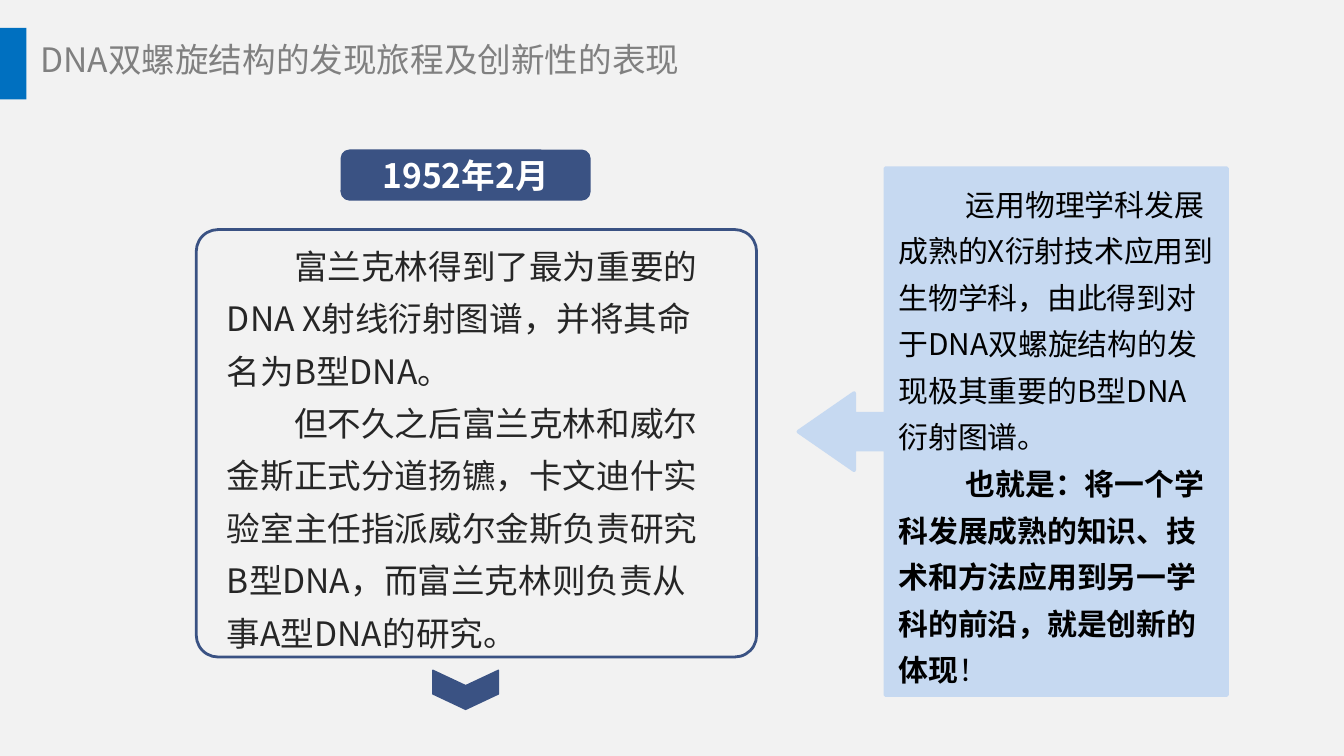
from dataclasses import dataclass

from lxml import etree
from pptx import Presentation
from pptx.dml.color import RGBColor
from pptx.enum.shapes import MSO_SHAPE
from pptx.enum.text import MSO_ANCHOR, MSO_AUTO_SIZE, PP_ALIGN
from pptx.oxml.ns import qn
from pptx.util import Cm, Pt

RECT = MSO_SHAPE.RECTANGLE
ROUND = MSO_SHAPE.ROUNDED_RECTANGLE
CHEVRON = MSO_SHAPE.CHEVRON
CALLOUT = MSO_SHAPE.LEFT_ARROW_CALLOUT
TOP, MIDDLE = MSO_ANCHOR.TOP, MSO_ANCHOR.MIDDLE
LEFT, CENTER = PP_ALIGN.LEFT, PP_ALIGN.CENTER
NO_FIT = MSO_AUTO_SIZE.NONE


@dataclass(frozen=True)
class Theme:
    font: str = "Noto Sans CJK SC"
    back: str = "F2F2F2"
    accent: str = "0070C0"
    navy: str = "3A5283"
    pale: str = "C6D9F1"
    white: str = "FFFFFF"
    title: str = "808080"
    body: str = "262626"
    black: str = "000000"
    large: int = 18
    small: int = 16
    spacing: float = 1.3


THEME = Theme()


def rgb(value):
    return RGBColor.from_string(value)


def add_shape(slide, kind, box, fill=None, line=None, width=0.75, adjust=()):
    sp = slide.shapes.add_shape(kind, *(Cm(v) for v in box))
    sp.shadow.inherit = False
    for i, value in enumerate(adjust):
        sp.adjustments[i] = value
    for fmt, color in ((sp.fill, fill), (sp.line.fill, line)):
        if color:
            fmt.solid()
            fmt.fore_color.rgb = rgb(color)
        else:
            fmt.background()
    if line:
        sp.line.width = Pt(width)
    return sp


def set_frame(tf, anchor=TOP, insets=(0.18, 0.08), wrap=True):
    x, y = (Cm(v) for v in insets)
    values = {
        "word_wrap": wrap, "auto_size": NO_FIT, "vertical_anchor": anchor,
        "margin_left": x, "margin_right": x,
        "margin_top": y, "margin_bottom": y,
    }
    for name, value in values.items():
        setattr(tf, name, value)


def write(tf, paragraphs, color, size, align=LEFT, indent=0, spacing=None):
    for i, runs in enumerate(paragraphs):
        p = tf.add_paragraph() if i else tf.paragraphs[0]
        p.alignment = align
        if spacing:
            p.line_spacing = spacing
        if indent:
            pPr = p._p.get_or_add_pPr()
            pPr.set("marL", "0")
            pPr.set("indent", str(Cm(indent)))
        for text, bold in runs:
            r = p.add_run()
            r.text = text
            values = {"name": THEME.font, "size": Pt(size), "bold": bold}
            for name, value in values.items():
                setattr(r.font, name, value)
            r.font.color.rgb = rgb(color)
            ea = etree.SubElement(r._r.get_or_add_rPr(), qn("a:ea"))
            ea.set("typeface", THEME.font)


def add_header(slide, box, text):
    x, y, w, h = box
    add_shape(slide, RECT, (x, y, 0.5, h), fill=THEME.accent)
    sp = slide.shapes.title
    values = {"left": x + 0.51, "top": y + 0.08, "width": w - 0.51, "height": 1.04}
    for name, value in values.items():
        setattr(sp, name, Cm(value))
    set_frame(sp.text_frame, insets=(0.25, 0.13), wrap=False)
    write(sp.text_frame, [[(text, False)]], THEME.title, THEME.large)


def add_event(slide, box, date, paragraphs):
    x, y, w, h = box
    axis = x + 5.09
    card_y, card_h = y + 1.5, h - 2.54

    add_shape(slide, ROUND, (x, card_y, w, card_h), line=THEME.navy,
              width=1.5, adjust=[0.051])
    sp = add_shape(slide, CHEVRON, (axis - 0.37, y + h - 1.04, 0.74, 1.24),
                   fill=THEME.navy, line=THEME.navy, adjust=[0.394])
    sp.rotation = 90

    sp = add_shape(slide, ROUND, (axis - 2.35, y, 4.7, 0.94),
                   fill=THEME.navy, line=THEME.navy, adjust=[0.167])
    set_frame(sp.text_frame, anchor=MIDDLE)
    write(sp.text_frame, [[(date, True)]], THEME.white, THEME.large, CENTER)

    text_box = (x + 0.4, card_y, w - 0.99, card_h)
    tf = slide.shapes.add_textbox(*(Cm(v) for v in text_box)).text_frame
    set_frame(tf)
    write(tf, paragraphs, THEME.body, THEME.large, indent=1.27,
          spacing=THEME.spacing)


def add_comment(slide, box, paragraphs):
    sp = add_shape(slide, CALLOUT, box, fill=THEME.pale, line=THEME.pale,
                   width=2, adjust=[0.083, 0.09, 0.13, 0.797])
    set_frame(sp.text_frame, anchor=MIDDLE, insets=(0.25, 0.13))
    write(sp.text_frame, paragraphs, THEME.black, THEME.small, indent=1.27,
          spacing=THEME.spacing)


def main():
    prs = Presentation()
    prs.slide_width, prs.slide_height = Cm(25.4), Cm(14.29)
    s = prs.slides.add_slide(prs.slide_layouts[5])
    s.background.fill.solid()
    s.background.fill.fore_color.rgb = rgb(THEME.back)

    add_header(s, (0, 0.53, 13.41, 1.35), "DNA双螺旋结构的发现旅程及创新性的表现")
    add_event(s, (3.71, 2.84, 10.59, 10.62), "1952年2月", [
        [("富兰克林得到了最为重要的DNA X射线衍射图谱，并将其命名为B型DNA。", False)],
        [("但不久之后富兰克林和威尔金斯正式分道扬镳，卡文迪什实验室主任指派"
          "威尔金斯负责研究B型DNA，而富兰克林则负责从事A型DNA的研究。", False)],
    ])
    add_comment(s, (15.09, 3.18, 8.1, 9.96), [
        [("运用物理学科发展成熟的X衍射技术应用到生物学科，由此得到"
          "对于DNA双螺旋结构的发现极其重要的B型DNA衍射图谱。", False)],
        [("也就是：将一个学科发展成熟的知识、技术和方法应用到另一学科的前沿，"
          "就是创新的体现", True), ("！", False)],
    ])
    prs.save("out.pptx")


if __name__ == "__main__":
    main()
